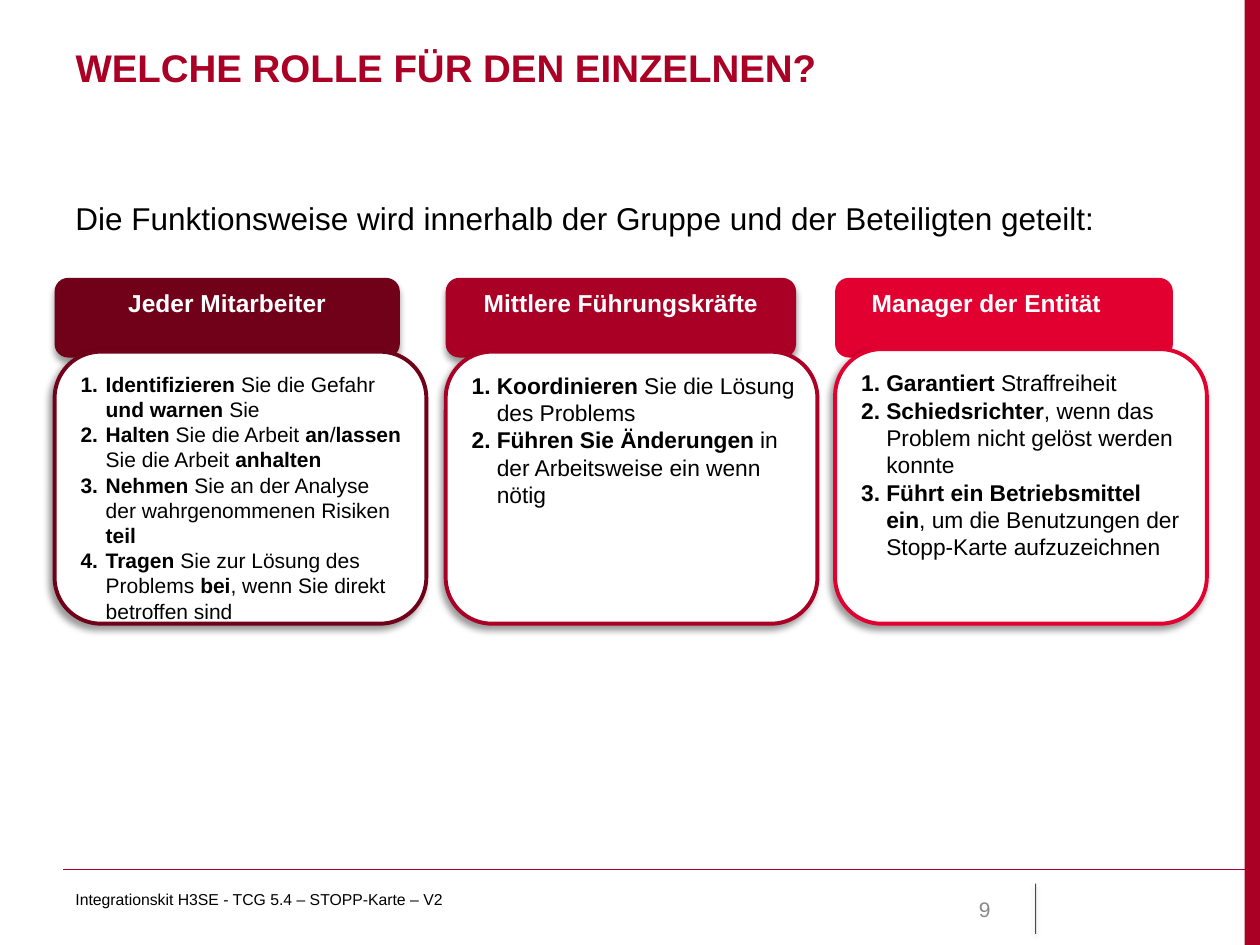
from dataclasses import dataclass

from lxml import etree
from pptx import Presentation
from pptx import util as u
from pptx.dml.color import RGBColor
from pptx.enum import shapes, text
from pptx.oxml.ns import qn

FONT = "Arial"
RED = "AA0025"
BLACK = "000000"
WHITE = "FFFFFF"
CORNER = 0.17
BODY_WIDTH = 212.4
HANGING = 14.4


@dataclass
class Box:
    left: float
    top: float
    width: float
    height: float

    def points(self):
        return [u.Pt(value) for value in (self.left, self.top, self.width, self.height)]


@dataclass
class Shadow:
    blur: float
    distance: float
    direction: int
    opacity: int


@dataclass
class Role:
    """One column; parts of a task between asterisks are bold."""
    heading: str
    color: str
    left: float
    heading_width: float
    body_top: float
    size: float
    tasks: list[str]
    heading_shadow: bool = True
    heading_right_inset: float = 7.2


ROLES = [
    Role("Jeder Mitarbeiter", "710019", 31.2, 197.3, 201, 12, [
        "*Identifizieren* Sie die Gefahr *und warnen* Sie",
        "*Halten* Sie die Arbeit *an*/*lassen* Sie die Arbeit *anhalten*",
        "*Nehmen* Sie an der Analyse der wahrgenommenen Risiken *teil*",
        "*Tragen* Sie zur Lösung des Problems *bei*, wenn Sie direkt betroffen sind",
    ]),
    Role("Mittlere Führungskräfte", RED, 254.7, 200.2, 201, 13, [
        "*Koordinieren* Sie die Lösung des Problems",
        "*Führen Sie Änderungen* in der Arbeitsweise ein wenn nötig",
    ]),
    Role("Manager der Entität", "E20031", 477.2, 193, 199.5, 13, [
        "*Garantiert* Straffreiheit",
        "*Schiedsrichter*, wenn das Problem nicht gelöst werden konnte",
        "*Führt ein Betriebsmittel ein*, um die Benutzungen der Stopp-Karte aufzuzeichnen",
    ], heading_shadow=False, heading_right_inset=27.2),
]
HEADING_TOP, HEADING_HEIGHT, BODY_BOTTOM = 158.8, 45.5, 356.4
HEADING_SHADOW = Shadow(4, 3, 90, 40)
BODY_SHADOW = Shadow(4, 3, 135, 40)


def rgb(color: str) -> RGBColor:
    return RGBColor.from_string(color)


def add_shadow(shape, shadow: Shadow) -> None:
    effects = shape._element.spPr.find(qn("a:effectLst"))
    outer = etree.SubElement(
        effects, qn("a:outerShdw"), blurRad=str(u.Pt(shadow.blur)),
        dist=str(u.Pt(shadow.distance)), dir=str(shadow.direction * 60000),
        algn="ctr", rotWithShape="0")
    black = etree.SubElement(outer, qn("a:srgbClr"), val=BLACK)
    etree.SubElement(black, qn("a:alpha"), val=str(shadow.opacity * 1000))


def format_paragraph(paragraph, size: float, color: str, bold=None,
                     align=text.PP_ALIGN.LEFT) -> None:
    paragraph.alignment = align
    font = paragraph.font
    font.name, font.size, font.bold = FONT, u.Pt(size), bold
    font.color.rgb = rgb(color)


def add_panel(parent, kind, box: Box, fill: str, line: str | None = None,
              shadow: Shadow | None = None):
    shape = parent.add_shape(kind, *box.points())
    shape.shadow.inherit = False
    shape.fill.solid()
    shape.fill.fore_color.rgb = rgb(fill)
    if line:
        shape.line.color.rgb = rgb(line)
        shape.line.width = u.Pt(2.25)
    else:
        shape.line.fill.background()
    if shadow:
        add_shadow(shape, shadow)
    return shape


def add_task(paragraph, number: int, task: str, size: float) -> None:
    properties = paragraph._p.get_or_add_pPr()
    properties.set("marL", str(u.Pt(HANGING)))
    properties.set("indent", str(-u.Pt(HANGING)))
    etree.SubElement(properties, qn("a:buFont"), typeface="+mj-lt")
    bullet = etree.SubElement(properties, qn("a:buAutoNum"), type="arabicPeriod")
    if number > 1:
        bullet.set("startAt", str(number))
    format_paragraph(paragraph, size, BLACK)
    for index, part in enumerate(task.split("*")):
        if part:
            run = paragraph.add_run()
            run.text = part
            run.font.bold = index % 2 == 1


def add_role(slide, role: Role) -> None:
    group = slide.shapes.add_group_shape().shapes
    rounded = shapes.MSO_SHAPE.ROUNDED_RECTANGLE

    heading = add_panel(group, rounded,
                        Box(role.left, HEADING_TOP, role.heading_width, HEADING_HEIGHT),
                        role.color, shadow=HEADING_SHADOW if role.heading_shadow else None)
    heading.adjustments[0] = CORNER
    frame = heading.text_frame
    frame.word_wrap = True
    frame.vertical_anchor = text.MSO_ANCHOR.TOP
    frame.margin_right = u.Pt(role.heading_right_inset)
    frame.text = role.heading
    format_paragraph(frame.paragraphs[0], 14, WHITE, True, text.PP_ALIGN.CENTER)

    body = add_panel(group, rounded,
                     Box(role.left, role.body_top, BODY_WIDTH, BODY_BOTTOM - role.body_top),
                     WHITE, role.color, BODY_SHADOW)
    body.adjustments[0] = CORNER
    frame = body.text_frame
    frame.word_wrap = True
    frame.vertical_anchor = text.MSO_ANCHOR.TOP
    frame.margin_right = u.Pt(5)
    for number, task in enumerate(role.tasks, 1):
        paragraph = frame.paragraphs[0] if number == 1 else frame.add_paragraph()
        add_task(paragraph, number, task, role.size)


def add_label(slide, box: Box, words: str, size: float, color=BLACK,
              align=text.PP_ALIGN.LEFT, anchor=text.MSO_ANCHOR.TOP) -> None:
    frame = slide.shapes.add_textbox(*box.points()).text_frame
    frame.word_wrap = True
    frame.vertical_anchor = anchor
    frame.text = words
    format_paragraph(frame.paragraphs[0], size, color, align=align)


def add_rule(slide, start: tuple, end: tuple, color: str, width: float):
    ends = [u.Pt(value) for value in (*start, *end)]
    rule = slide.shapes.add_connector(shapes.MSO_CONNECTOR.STRAIGHT, *ends)
    rule.line.color.rgb = rgb(color)
    rule.line.width = u.Pt(width)
    etree.SubElement(rule._element.spPr, qn("a:effectLst"))
    return rule


def main() -> None:
    presentation = Presentation()
    presentation.slide_width, presentation.slide_height = u.Pt(720), u.Pt(540)
    slide = presentation.slides.add_slide(presentation.slide_layouts[5])

    add_panel(slide.shapes, shapes.MSO_SHAPE.RECTANGLE, Box(711.2, 0, 8.8, 540), RED)
    add_rule(slide, (36, 496.9), (720, 496.9), RED, 1)
    divider = add_rule(slide, (591.8, 505), (591.8, 533.7), BLACK, 0.5)
    divider_color = divider._element.spPr.find(".//" + qn("a:srgbClr"))
    etree.SubElement(divider_color, qn("a:alpha"), val="70000")
    add_shadow(divider, Shadow(3.1, 1.6, 90, 38))

    title = slide.shapes.title
    title.left, title.top, title.width, title.height = Box(36, 21.6, 647.3, 49.7).points()
    title.text_frame.text = "WELCHE ROLLE FÜR DEN EINZELNEN?"
    title.text_frame.vertical_anchor = text.MSO_ANCHOR.TOP
    format_paragraph(title.text_frame.paragraphs[0], 22, RED, True)

    add_label(slide, Box(516.2, 505.1, 56.9, 28.8), "9", 12, "898989",
              text.PP_ALIGN.RIGHT, text.MSO_ANCHOR.MIDDLE)
    for role in ROLES:
        add_role(slide, role)
    add_label(slide, Box(36, 110.2, 654.5, 28.8),
              "Die Funktionsweise wird innerhalb der Gruppe und der Beteiligten geteilt:", 18)
    add_label(slide, Box(36, 504.7, 437.8, 28.8),
              "Integrationskit H3SE - TCG 5.4 – STOPP-Karte – V2", 9)
    presentation.save("out.pptx")


if __name__ == "__main__":
    main()
